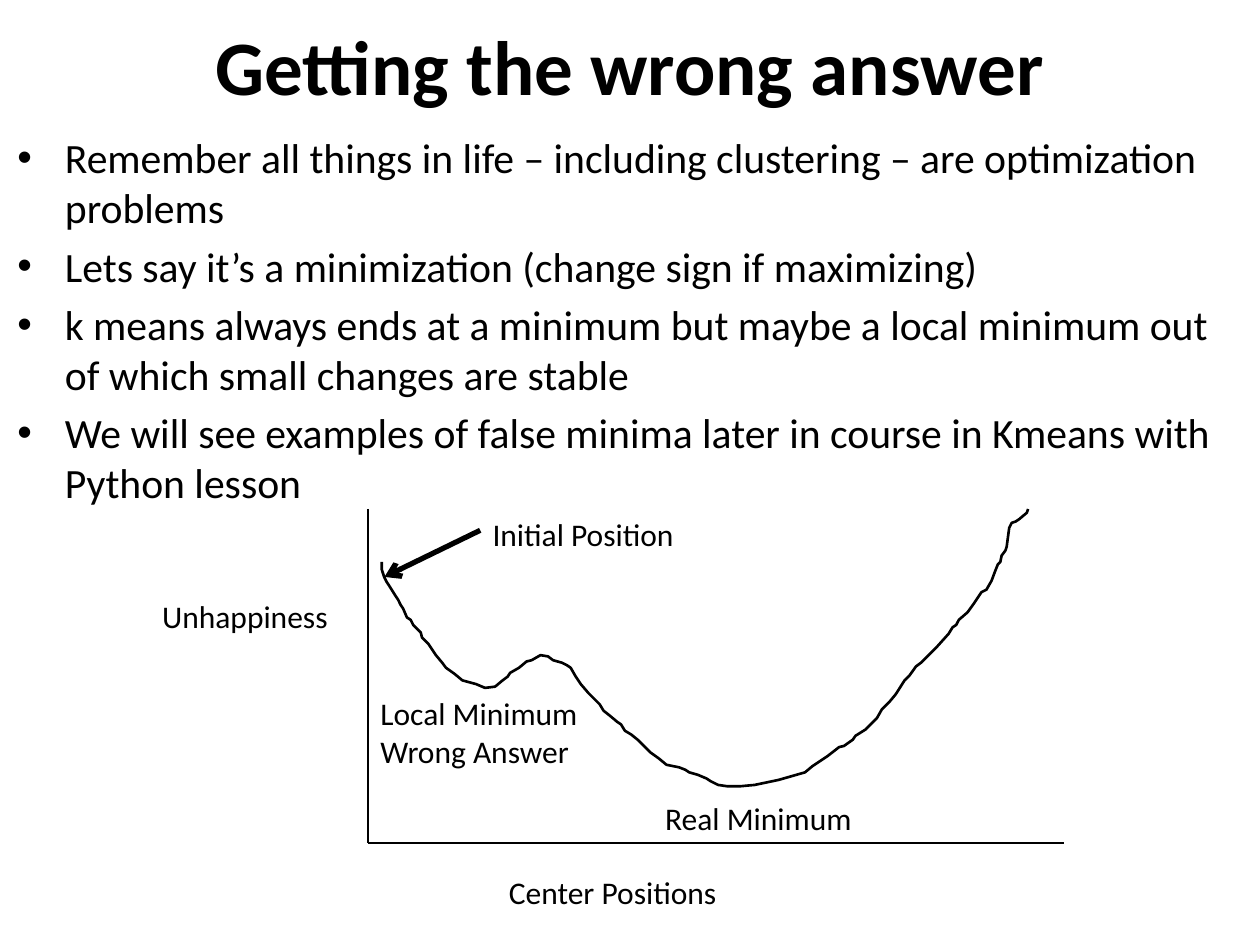
"""Build a slide on local and real minima in clustering."""
from lxml import etree
from pptx import Presentation
from pptx.dml.color import RGBColor
from pptx.enum.shapes import MSO_CONNECTOR
from pptx.enum.text import MSO_ANCHOR, MSO_AUTO_SIZE, PP_ALIGN
from pptx.oxml.ns import qn
from pptx.util import Cm, Pt

LINE = MSO_CONNECTOR.STRAIGHT
MID, TOP = MSO_ANCHOR.MIDDLE, MSO_ANCHOR.TOP
LEFT, CENTER = PP_ALIGN.LEFT, PP_ALIGN.CENTER
FIT, FIXED = MSO_AUTO_SIZE.SHAPE_TO_FIT_TEXT, MSO_AUTO_SIZE.NONE

COLORS = {"ink": "000000", "back": "FFFFFF"}
TITLE = "Getting the wrong answer"
POINTS = [
    "Remember all things in life – including clustering – are optimization problems",
    "Lets say it’s a minimization (change sign if maximizing)",
    "k means always ends at a minimum but maybe a local minimum out of which small changes are stable",
    "We will see examples of false minima later in course in Kmeans with Python lesson",
]
LABELS = [
    ("Unhappiness", (3.02, 11.91, 3.89, 1.02)),
    ("Real Minimum", (13.16, 15.98, 4.32, 1.02)),
    ("Local Minimum\nWrong Answer", (7.42, 13.87, 4.52, 1.8)),
    ("Initial Position", (9.68, 10.26, 4.22, 1.02)),
    ("Center Positions", (10.01, 17.48, 4.75, 1.02)),
]
AXES = [(7.42, 10.26, 7.42, 16.99), (21.44, 16.99, 7.42, 16.99)]
ARROW = (9.68, 10.69, 7.75, 11.63)
UNIT = 0.0254
CURVE = [
    (303, 446), (303, 452), (305, 458), (307, 462), (309, 465), (314, 473),
    (316, 476), (318, 480), (320, 483), (323, 490), (326, 492), (328, 496),
    (334, 502), (335, 506), (340, 511), (342, 514), (346, 520), (351, 526),
    (354, 530), (361, 535), (367, 540), (378, 543), (385, 546), (393, 545),
    (399, 540), (403, 537), (405, 534), (412, 530), (418, 525), (422, 524),
    (429, 520), (435, 521), (439, 524), (446, 526), (450, 528), (453, 530),
    (457, 537), (461, 543), (467, 550), (473, 556), (476, 559), (479, 564),
    (484, 568), (490, 573), (493, 575), (496, 580), (501, 583), (506, 587),
    (516, 597), (523, 602), (529, 607), (539, 609), (544, 611), (547, 613),
    (554, 615), (561, 618), (564, 620), (570, 623), (577, 624), (588, 623.5),
    (599, 623), (618, 619), (632, 615), (639, 613), (645, 608), (651, 604),
    (657, 600), (666, 593), (670, 592), (677, 587), (679, 584), (687, 579),
    (693, 573), (696, 570), (700, 563), (706, 557), (711, 551), (718, 540),
    (722, 536), (727, 529), (731, 526), (737, 520), (744, 513), (753, 503),
    (756, 498), (759, 496), (761, 492), (768, 486), (773, 479), (779, 470),
    (783, 468), (787, 461), (790, 453), (792, 448), (794, 446), (795, 441),
    (798, 437), (799, 434), (801, 419), (803, 415), (806, 414), (809, 412),
    (815, 407), (816, 404),
]


def ink(name):
    return RGBColor.from_string(COLORS[name])


def add_text(slide, box, lines, size, bold=False, wrap=True,
             fit=FIXED, anchor=TOP, align=LEFT, gap=0):
    frame = slide.shapes.add_textbox(*map(Cm, box)).text_frame
    form = {"word_wrap": wrap, "auto_size": fit, "vertical_anchor": anchor}
    for key, value in form.items():
        setattr(frame, key, value)
    look = {"name": "Calibri", "size": Pt(size), "bold": bold}
    for spot, line in enumerate(lines):
        para = frame.add_paragraph() if spot else frame.paragraphs[0]
        para.text, para.alignment, para.space_before = line, align, Pt(gap)
        for run in para.runs:
            for key, value in look.items():
                setattr(run.font, key, value)
            run.font.color.rgb = ink("ink")
    return frame


def add_bullet(para):
    props = para._p.get_or_add_pPr()
    props.set("marL", str(Cm(0.96)))
    props.set("indent", str(Cm(-0.96)))
    etree.SubElement(props, qn("a:buFont")).set("typeface", "Arial")
    etree.SubElement(props, qn("a:buChar")).set("char", "•")


def add_line(slide, ends, width):
    line = slide.shapes.add_connector(LINE, *map(Cm, ends))
    line.line.color.rgb, line.line.width = ink("ink"), Pt(width)
    etree.SubElement(line._element.spPr, qn("a:effectLst"))
    return line


def add_curve(slide):
    build = slide.shapes.build_freeform(*CURVE[0], scale=Cm(UNIT))
    build.add_line_segments(CURVE[1:], close=False)
    curve = build.convert_to_shape()
    curve.shadow.inherit = False
    curve.fill.background()
    curve.line.color.rgb, curve.line.width = ink("ink"), Pt(1.5)


def main():
    deck = Presentation()
    deck.slide_width, deck.slide_height = Cm(25.4), Cm(19.05)
    slide = deck.slides.add_slide(deck.slide_layouts[6])
    slide.background.fill.solid()
    slide.background.fill.fore_color.rgb = ink("back")

    add_text(slide, (1.27, 0.08, 22.86, 2.46), [TITLE], 44,
             bold=True, anchor=MID, align=CENTER)
    body = add_text(slide, (0.1, 2.54, 24.56, 6.83), POINTS, 23.8, gap=4.8)
    for para in body.paragraphs:
        add_bullet(para)

    add_curve(slide)
    for axis in AXES:
        add_line(slide, axis, 1)
    arrow = add_line(slide, ARROW, 3)
    etree.SubElement(arrow.line._get_or_add_ln(), qn("a:tailEnd")).set("type", "arrow")
    for text, box in LABELS:
        add_text(slide, box, [text], 18, wrap=False, fit=FIT)
    deck.save("out.pptx")


if __name__ == "__main__":
    main()
